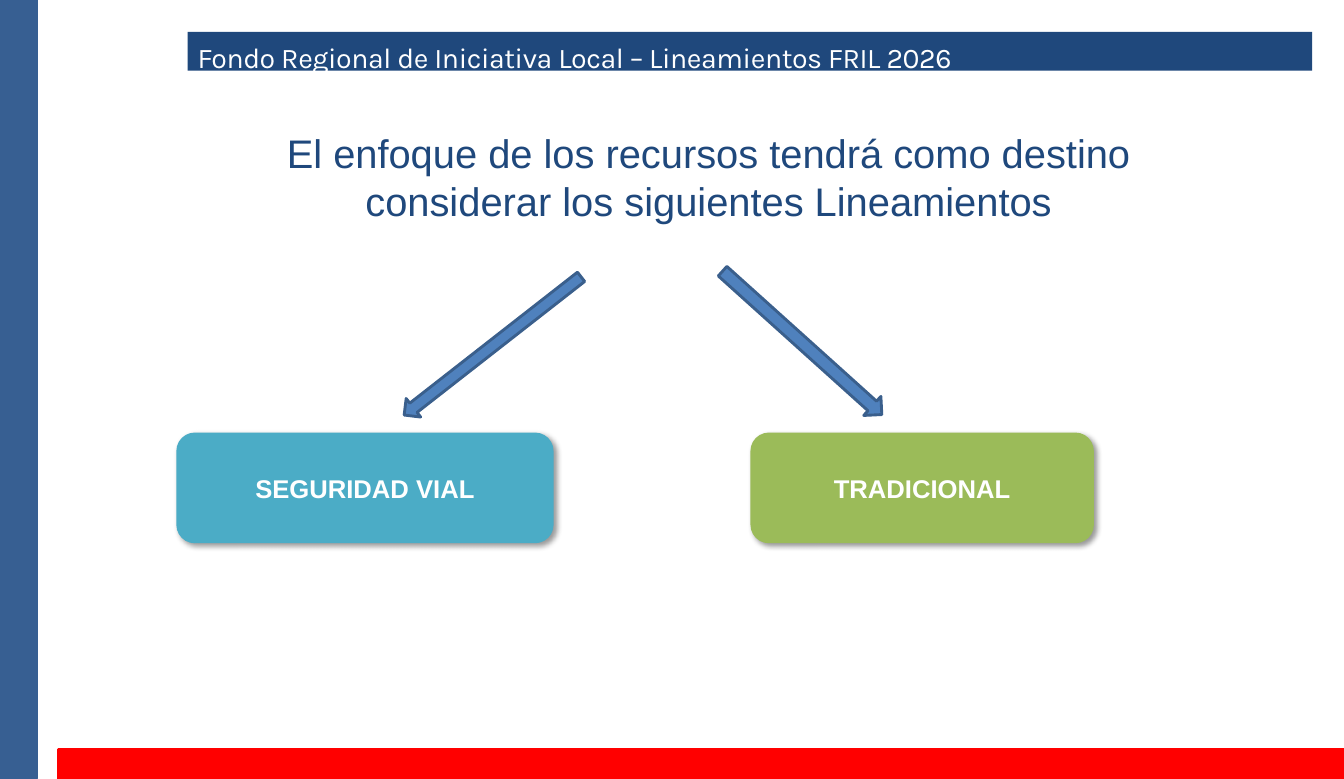
import pptx
import pptx.dml.color
import pptx.enum.shapes
import pptx.enum.text
import pptx.oxml
import pptx.oxml.ns
import pptx.util

Inches = pptx.util.Inches
Pt = pptx.util.Pt
SHAPES = pptx.enum.shapes.MSO_SHAPE
ALIGN = pptx.enum.text.PP_ALIGN
ANCHOR = pptx.enum.text.MSO_ANCHOR
WIDTH, HEIGHT = 13.11, 7.6
NAVY = "1F487C"
WHITE = "FFFFFF"


def color(value):
    return pptx.dml.color.RGBColor.from_string(value)


def apply_format(target, values):
    for name, value in values.items():
        setattr(target, name, value)


def add_block(slide, kind, box, fill, border=None):
    block = slide.shapes.add_shape(kind, *map(Inches, box))
    block.shadow.inherit = False
    block.fill.solid()
    block.fill.fore_color.rgb = color(fill)
    if border:
        block.line.color.rgb = color(border)
        block.line.width = Pt(2)
    else:
        block.line.fill.background()
    return block


def write(holder, wording, font, ink, frame, align):
    apply_format(holder.text_frame, {"word_wrap": True, **frame})
    paragraph = holder.text_frame.paragraphs[0]
    paragraph.alignment = align
    run = paragraph.add_run()
    run.text = wording
    apply_format(run.font, font)
    run.font.color.rgb = color(ink)
    return run


def add_shadow(block):
    effects = block._element.spPr.find(pptx.oxml.ns.qn("a:effectLst"))
    effects.append(pptx.oxml.parse_xml(
        f'<a:outerShdw {pptx.oxml.ns.nsdecls("a")} blurRad="{Pt(4)}" dist="{Pt(3)}" '
        'dir="2700000" algn="tl" rotWithShape="0"><a:srgbClr val="000000">'
        '<a:alpha val="40000"/></a:srgbClr></a:outerShdw>'))


def add_edges(slide, left, top, width, height):
    side, gap, base = 0.36, 0.57, 0.29
    for box, fill in (
        ((left, top, side, height), "375F92"),
        ((left + gap, top + height - base, width - gap, base), "FF0000"),
    ):
        add_block(slide, SHAPES.RECTANGLE, box, fill, fill)


def add_banner(slide, *box):
    banner = add_block(slide, SHAPES.RECTANGLE, box, NAVY)
    frame = {
        "margin_left": Inches(0.1),
        "margin_top": Inches(0.08),
        "margin_right": 0,
        "margin_bottom": 0,
        "vertical_anchor": ANCHOR.TOP,
    }
    run = write(banner, "Fondo Regional de Iniciativa Local – Lineamientos FRIL 2026",
                {"name": "Karla", "size": Pt(20)}, WHITE, frame, ALIGN.LEFT)
    run.font._element.set("spc", "-30")


def add_heading(slide, *box):
    heading = slide.shapes.add_textbox(*map(Inches, box))
    frame = {f"margin_{side}": 0 for side in ("left", "top", "right", "bottom")}
    write(heading, "El enfoque de los recursos tendrá como destino considerar los siguientes Lineamientos",
          {"name": "Arial", "size": Pt(28)}, NAVY, frame, ALIGN.CENTER)


def add_guidelines(slide, left, top, width, height):
    arrows = (
        (2.97, 0, 0.23, 2.19, 52),
        (5.98, 0.02, 0.25, 2.09, 312),
    )
    for x, y, thickness, length, angle in arrows:
        arrow = add_block(slide, SHAPES.DOWN_ARROW, (left + x, top + y, thickness, length),
                          "4F81BD", "3A5F8C")
        arrow.rotation = angle

    card_height = 1.08
    card_top = top + height - card_height
    traditional_width = 3.35
    cards = (
        ("SEGURIDAD VIAL", left, 3.68, "4BACC6"),
        ("TRADICIONAL", left + width - traditional_width, traditional_width, "9BBB59"),
    )
    for wording, x, card_width, fill in cards:
        card = add_block(slide, SHAPES.ROUNDED_RECTANGLE, (x, card_top, card_width, card_height), fill)
        add_shadow(card)
        write(card, wording, {"name": "Arial", "size": Pt(18), "bold": True}, WHITE,
              {"vertical_anchor": ANCHOR.MIDDLE}, ALIGN.CENTER)


def main():
    deck = pptx.Presentation()
    apply_format(deck, {"slide_width": Inches(WIDTH), "slide_height": Inches(HEIGHT)})
    slide = deck.slides.add_slide(deck.slide_layouts[6])
    add_edges(slide, 0, 0, WIDTH, HEIGHT)
    add_heading(slide, 2.72, 1.26, 8.38, 0.94)
    add_guidelines(slide, 1.72, 2.28, 8.95, 3.02)
    add_banner(slide, 1.83, 0.31, 10.97, 0.38)
    deck.save("out.pptx")


if __name__ == "__main__":
    main()
